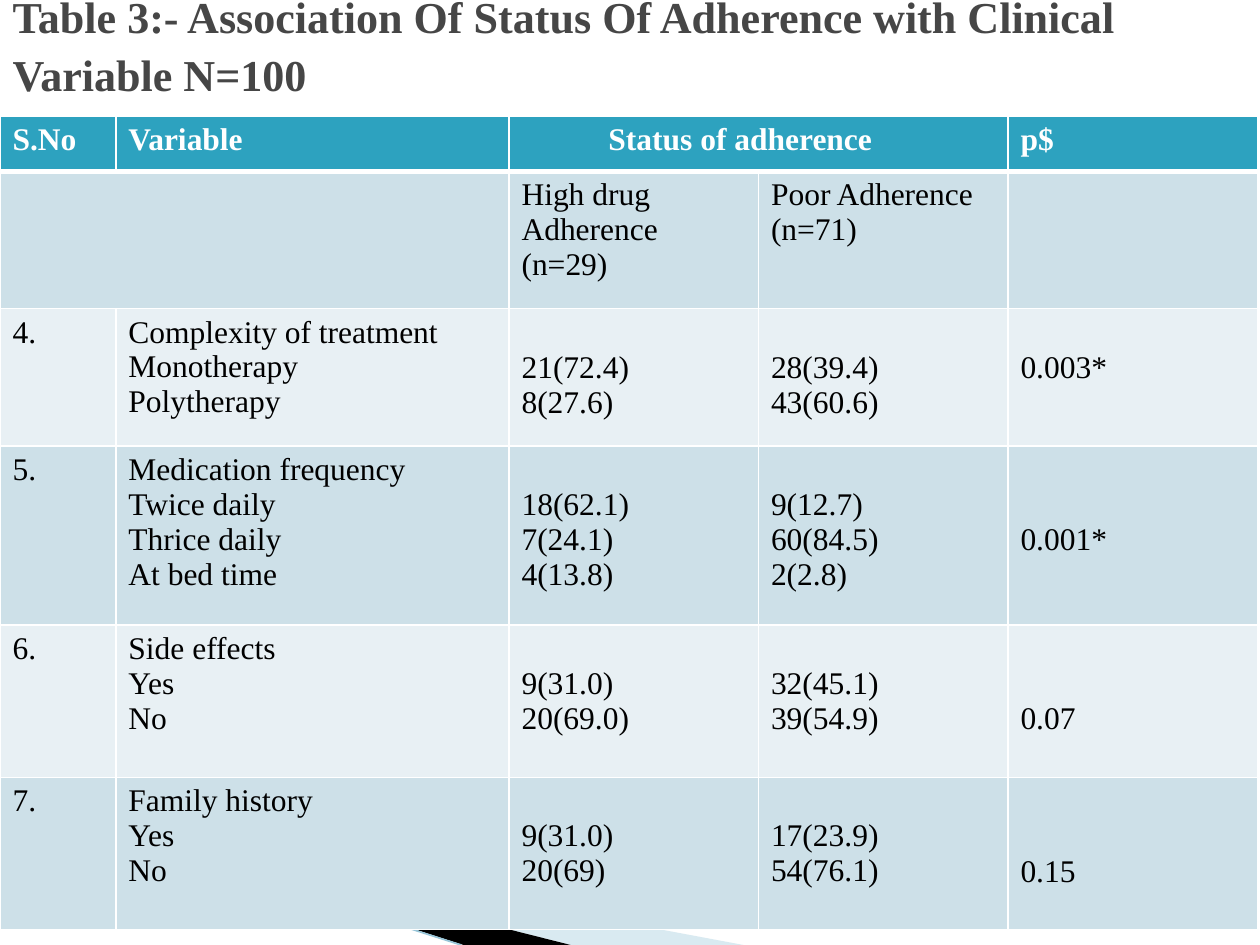
from lxml.etree import SubElement
from pptx import Presentation
from pptx.dml.color import RGBColor
from pptx.enum.shapes import MSO_CONNECTOR
from pptx.enum.text import MSO_ANCHOR, MSO_AUTO_SIZE, PP_ALIGN
from pptx.oxml.ns import qn
from pptx.util import Inches, Pt

FONT = "Times New Roman"
WHITE, BLACK, TEAL = "FFFFFF", "000000", "2DA2BF"
BANDS = ("CDE0E8", "E8F0F4")
COLUMN_WIDTHS = (0.92, 3.12, 1.98, 1.98, 1.98)
ROW_HEIGHTS = (0.44, 1.09, 1.09, 1.42, 1.21, 1.21)
LINE_HEIGHT = 0.28
INSET_X, INSET_Y = 0.1, 0.05

HEADINGS = ("S.No", "Variable", "Status of adherence", "", "p$")
GROUPS = ("", "", "High drug\nAdherence\n(n=29)", "Poor Adherence\n(n=71)", "")
# number, variable with its levels, high adherence, poor adherence, p value, p value's line
VARIABLES = (
    ("4.", "Complexity of treatment\nMonotherapy\nPolytherapy",
     "21(72.4)\n8(27.6)", "28(39.4)\n43(60.6)", "0.003*", 1),
    ("5.", "Medication frequency\nTwice daily\nThrice daily\nAt bed time",
     "18(62.1)\n7(24.1)\n4(13.8)", "9(12.7)\n60(84.5)\n2(2.8)", "0.001*", 2),
    ("6.", "Side effects\nYes\nNo",
     "9(31.0)\n20(69.0)", "32(45.1)\n39(54.9)", "0.07", 2),
    ("7.", "Family history\nYes\nNo",
     "9(31.0)\n20(69)", "17(23.9)\n54(76.1)", "0.15", 2),
)


def rgb(color):
    return RGBColor.from_string(color)


def style_text(frame, size, color, bold):
    for paragraph in frame.paragraphs:
        paragraph.alignment = PP_ALIGN.LEFT
        for run in paragraph.runs:
            run.font.name = FONT
            run.font.size = Pt(size)
            run.font.bold = bold
            run.font.color.rgb = rgb(color)


def add_title(slide, text):
    title = slide.shapes.title
    title.left, title.top = Inches(0), Inches(0)
    title.width, title.height = Inches(10), Inches(0.68)
    frame = title.text_frame
    frame.text = text
    frame.word_wrap = True
    frame.auto_size = MSO_AUTO_SIZE.NONE
    frame.vertical_anchor = MSO_ANCHOR.MIDDLE
    frame.paragraphs[0].line_spacing = 1.08
    style_text(frame, 25.2, "464646", True)


def add_swoosh(slide, points, color, opacity=100):
    corners = [(Inches(x), Inches(y)) for x, y in points]
    builder = slide.shapes.build_freeform(*corners[0], scale=1.0)
    builder.add_line_segments(corners[1:], close=True)
    swoosh = builder.convert_to_shape()
    swoosh.shadow.inherit = False
    swoosh.line.fill.background()
    swoosh.fill.solid()
    swoosh.fill.fore_color.rgb = rgb(color)
    if opacity < 100:
        tint = swoosh.fill._xPr.find(".//" + qn("a:srgbClr"))
        SubElement(tint, qn("a:alpha"), val=str(opacity * 1000))


def add_edge_line(slide, start, end, color, width):
    edge = slide.shapes.add_connector(
        MSO_CONNECTOR.STRAIGHT, *(Inches(v) for v in (*start, *end)))
    edge.line.color.rgb = rgb(color)
    edge.line.width = Pt(width)
    SubElement(edge._element.spPr, qn("a:effectLst"))


def set_borders(cell, bottom_width):
    """Draw white rules around a cell; they must precede its fill in the XML."""
    properties = cell._tc.get_or_add_tcPr()
    widths = {"a:lnL": 1, "a:lnR": 1, "a:lnT": 1, "a:lnB": bottom_width}
    for tag, width in widths.items():
        border = SubElement(properties, qn(tag), w=str(Pt(width)))
        fill = SubElement(border, qn("a:solidFill"))
        SubElement(fill, qn("a:srgbClr"), val=WHITE)


def fill_cell(cell, text, row, start_line=0):
    """Write a cell whose text begins start_line lines below its top."""
    is_header = row == 0
    set_borders(cell, 3 if is_header else 1)
    cell.fill.solid()
    cell.fill.fore_color.rgb = rgb(TEAL if is_header else BANDS[(row - 1) % 2])
    cell.margin_top = Inches(INSET_Y + start_line * LINE_HEIGHT)
    cell.text_frame.text = text
    style_text(cell.text_frame, 18, WHITE if is_header else BLACK, is_header)


def add_adherence_table(slide):
    table = slide.shapes.add_table(
        len(ROW_HEIGHTS), len(COLUMN_WIDTHS), Inches(0), Inches(0.92),
        Inches(sum(COLUMN_WIDTHS)), Inches(sum(ROW_HEIGHTS))).table
    for column, width in zip(table.columns, COLUMN_WIDTHS):
        column.width = Inches(width)
    for table_row, height in zip(table.rows, ROW_HEIGHTS):
        table_row.height = Inches(height)

    for row, texts in enumerate((HEADINGS, GROUPS)):
        for column, text in enumerate(texts):
            fill_cell(table.cell(row, column), text, row)
    for row, (*texts, p_line) in enumerate(VARIABLES, start=2):
        start_lines = (0, 0, 1, 1, p_line)
        for column, (text, line) in enumerate(zip(texts, start_lines)):
            fill_cell(table.cell(row, column), text, row, line)

    status_heading = table.cell(0, 2)
    status_heading.merge(table.cell(0, 3))
    status_heading.margin_left = Inches(INSET_X + 0.69)
    table.cell(1, 0).merge(table.cell(1, 1))


def main():
    presentation = Presentation()
    presentation.slide_width, presentation.slide_height = Inches(10), Inches(7.5)
    slide = presentation.slides.add_slide(presentation.slide_layouts[5])
    add_title(slide, "Table 3:- Association Of Status Of Adherence "
                     "with Clinical Variable N=100")
    add_swoosh(slide, [(0.55, 6.5), (5.9, 7.5), (4.53, 7.5)], "A0CBDC", 40)
    add_swoosh(slide, [(0.53, 6.49), (4.53, 7.5), (3.68, 7.5)], BLACK)
    add_edge_line(slide, (0, 6.33), (3.66, 7.5), "97C5D8", 0.95)
    add_adherence_table(slide)
    presentation.save("out.pptx")


if __name__ == "__main__":
    main()
